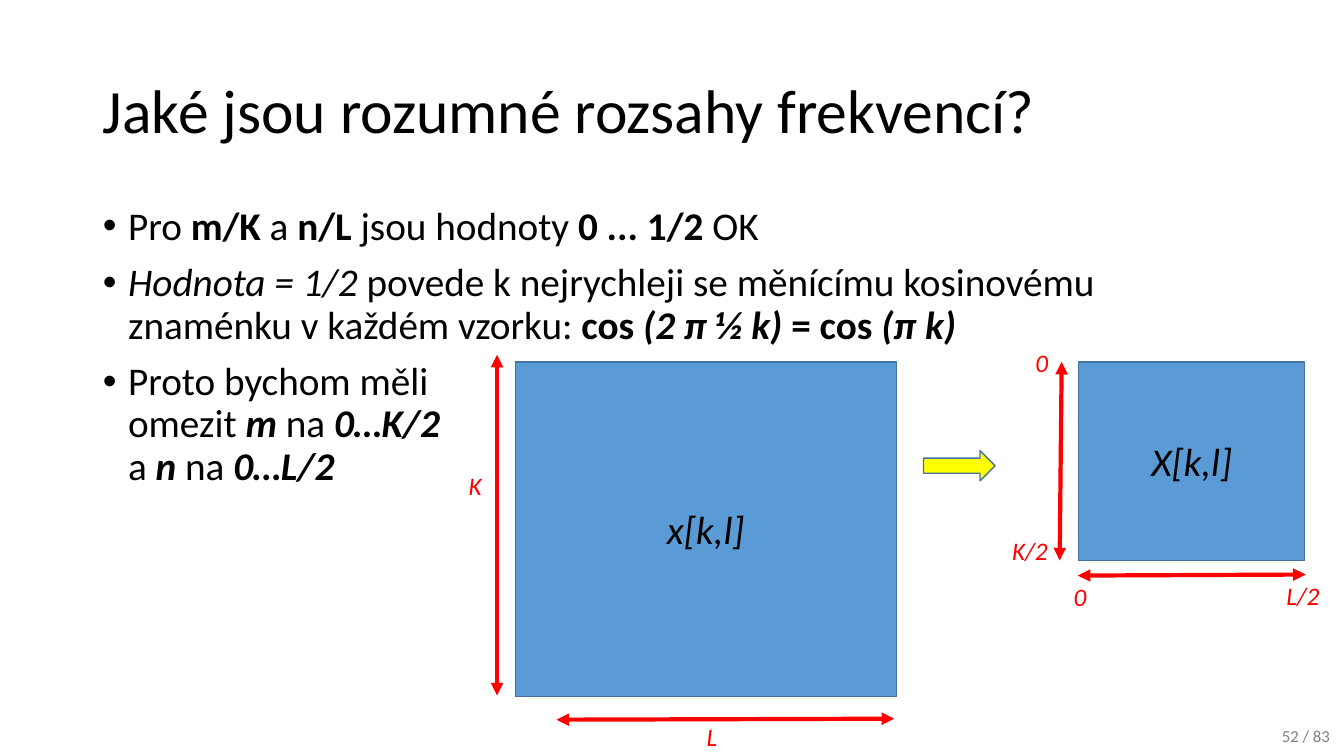
from lxml import etree
from pptx import Presentation
from pptx.dml.color import RGBColor
from pptx.enum.shapes import MSO_CONNECTOR, MSO_SHAPE
from pptx.enum.text import MSO_ANCHOR, MSO_AUTO_SIZE, PP_ALIGN
from pptx.oxml.ns import qn
from pptx.util import Inches, Pt

LEFT, CENTER, RIGHT = PP_ALIGN.LEFT, PP_ALIGN.CENTER, PP_ALIGN.RIGHT
TOP, MIDDLE = MSO_ANCHOR.TOP, MSO_ANCHOR.MIDDLE
RECT, ARROW = MSO_SHAPE.RECTANGLE, MSO_SHAPE.RIGHT_ARROW

COLORS = {"black": "000000", "red": "FF0000", "blue": "5B9BD5",
          "edge": "43739E", "yellow": "FFFF00", "gray": "808080"}
FONT = "Calibri"

TITLE = "Jaké jsou rozumné rozsahy frekvencí?"
BULLETS = [
    [("Pro ", ""), ("m/K", "b"), (" a ", ""), ("n/L", "b"),
     (" jsou hodnoty ", ""), ("0 ... 1/2 ", "b"), ("OK", "")],
    [("Hodnota = 1/2 ", "i"),
     ("povede k nejrychleji se měnícímu kosinovému znaménku v každém vzorku: ", ""),
     ("cos ", "b"), ("(2 π ½ k)", "bi"), (" = cos ", "b"), ("(π k)", "bi")],
    [("Proto bychom měli \nomezit ", ""), ("m ", "bi"), ("na ", ""),
     ("0…K/2 \n", "bi"), ("a ", ""), ("n ", "bi"), ("na ", ""), ("0…L/2", "bi")],
]
SHAPES = [
    (RECT, (5.11, 3.59, 3.78, 3.32), "blue", "x[k,l]"),
    (ARROW, (9.16, 4.47, 0.71, 0.3), "yellow", ""),
    (RECT, (10.7, 3.59, 2.24, 1.97), "blue", "X[k,l]"),
]
DIMENSIONS = [
    (4.93, 3.52, 4.93, 6.9),
    (8.87, 7.13, 5.52, 7.14),
    (10.53, 3.59, 10.51, 5.56),
    (10.69, 5.71, 12.95, 5.7),
]
LABELS = [
    ("K", 4.55, 4.62, 0.38),
    ("L", 6.91, 7.11, 0.38),
    ("K/2", 9.94, 5.26, 0.67),
    ("L/2", 12.66, 5.71, 0.67),
    ("0", 10.17, 3.4, 0.36),
    ("0", 10.55, 5.72, 0.36),
]


def rgb(name):
    return RGBColor.from_string(COLORS[name])


def place(sp, box):
    sp.left, sp.top, sp.width, sp.height = map(Inches, box)


def add_bullet(p):
    pPr = p._p.get_or_add_pPr()
    pPr.set("marL", str(Inches(0.25)))
    pPr.set("indent", str(-Inches(0.25)))
    etree.SubElement(pPr, qn("a:buFont")).set("typeface", "Arial")
    etree.SubElement(pPr, qn("a:buChar")).set("char", "•")


def write(tf, paragraphs, size=18, color="black", align=LEFT, anchor=TOP,
          spacing=1.0, before=0, bullet=False):
    tf.word_wrap = True
    tf.auto_size = MSO_AUTO_SIZE.NONE
    tf.vertical_anchor = anchor
    for i, runs in enumerate(paragraphs):
        p = tf.add_paragraph() if i else tf.paragraphs[0]
        if bullet:
            add_bullet(p)
        p.alignment, p.line_spacing = align, spacing
        p.space_before = Pt(before if i else 0)
        for text, style in runs:
            for n, part in enumerate(text.split("\n")):
                if n:
                    p.add_line_break()
                if part:
                    r = p.add_run()
                    r.text = part
                    r.font.name, r.font.size = FONT, Pt(size)
                    r.font.bold, r.font.italic = "b" in style, "i" in style
                    r.font.color.rgb = rgb(color)


def add_text(s, text, box, style="", **fmt):
    sp = s.shapes.add_textbox(*map(Inches, box))
    write(sp.text_frame, [[(text, style)]], **fmt)


def add_figure(s, kind, box, fill, text):
    sp = s.shapes.add_shape(kind, *map(Inches, box))
    sp.shadow.inherit = False
    sp.fill.solid()
    sp.fill.fore_color.rgb = rgb(fill)
    sp.line.color.rgb = rgb("edge")
    sp.line.width = Pt(1)
    if text:
        write(sp.text_frame, [[(text, "i")]], size=28, align=CENTER, anchor=MIDDLE)


def add_dimension(s, ends):
    c = s.shapes.add_connector(MSO_CONNECTOR.STRAIGHT, *map(Inches, ends))
    c.line.color.rgb = rgb("red")
    c.line.width = Pt(3)
    ln = c.line._get_or_add_ln()
    for tag in ("a:headEnd", "a:tailEnd"):
        etree.SubElement(ln, qn(tag)).set("type", "triangle")
    etree.SubElement(c._element.spPr, qn("a:effectLst"))


def main():
    prs = Presentation()
    prs.slide_width, prs.slide_height = Inches(13.33), Inches(7.5)
    s = prs.slides.add_slide(prs.slide_layouts[1])
    title, body = s.shapes.title, s.placeholders[1]
    place(title, (0.92, 0.4, 11.5, 1.45))
    write(title.text_frame, [[(TITLE, "")]], size=44, anchor=MIDDLE, spacing=0.9)
    place(body, (0.92, 2, 11.5, 4.76))
    write(body.text_frame, BULLETS, size=28, spacing=0.9, before=10, bullet=True)
    for figure in SHAPES:
        add_figure(s, *figure)
    for ends in DIMENSIONS:
        add_dimension(s, ends)
    for text, x, y, w in LABELS:
        add_text(s, text, (x, y, w, 0.4), style="i", color="red")
    add_text(s, "52 / 83", (12.42, 7.15, 0.87, 0.33), size=12, color="gray", align=RIGHT)
    prs.save("out.pptx")


if __name__ == "__main__":
    main()
